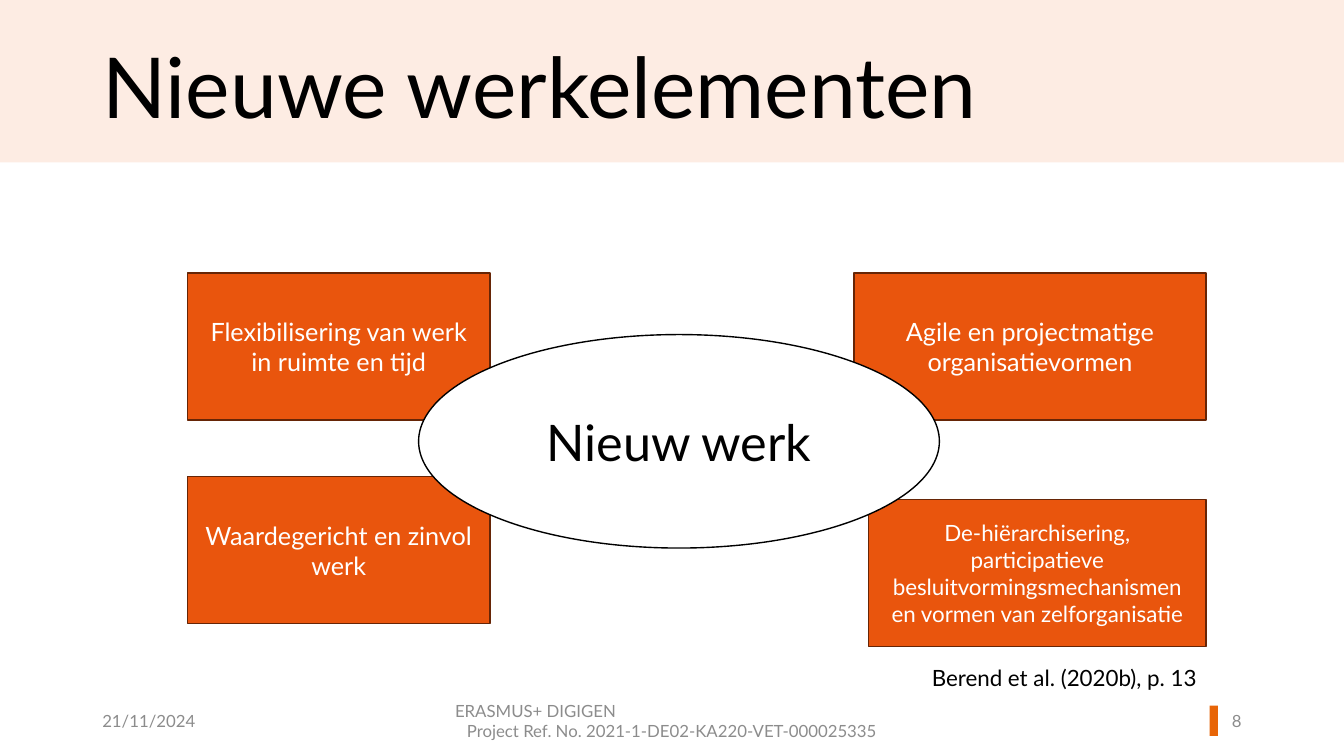
from dataclasses import dataclass

from pptx import Presentation
from pptx.dml.color import RGBColor
from pptx.enum import shapes, text
from pptx.util import Pt


@dataclass(frozen=True)
class Theme:
    font: str = "Lato"
    band: str = "FDECE3"
    accent: str = "E86507"
    box: str = "E9550D"
    box_line: str = "662506"
    dark: str = "000000"
    light: str = "FFFFFF"
    muted: str = "8C8C8C"
    title_size: int = 60
    core_size: int = 36
    box_size: int = 18
    small_size: int = 16
    footer_size: int = 12


THEME = Theme()
SHAPE = shapes.MSO_SHAPE
ANCHOR = text.MSO_ANCHOR
LEFT, CENTER, RIGHT = text.PP_ALIGN.LEFT, text.PP_ALIGN.CENTER, text.PP_ALIGN.RIGHT


def write(frame, lines, size, color, anchor=ANCHOR.MIDDLE, spacing=None):
    """Fill a text frame with (wording, alignment) lines in one style."""
    frame.word_wrap = True
    frame.vertical_anchor = anchor
    for index, (wording, alignment) in enumerate(lines):
        paragraph = frame.paragraphs[0] if index == 0 else frame.add_paragraph()
        paragraph.text = wording
        paragraph.alignment = alignment
        if spacing:
            paragraph.line_spacing = spacing
        paragraph.font.name = THEME.font
        paragraph.font.size = Pt(size)
        paragraph.font.color.rgb = RGBColor.from_string(color)


def add_label(slide, bounds, lines, size, color, **style):
    label = slide.shapes.add_textbox(*map(Pt, bounds))
    write(label.text_frame, lines, size, color, **style)


def add_figure(slide, kind, bounds, fill, line=None):
    figure = slide.shapes.add_shape(kind, *map(Pt, bounds))
    figure.shadow.inherit = False
    figure.fill.solid()
    figure.fill.fore_color.rgb = RGBColor.from_string(fill)
    if line:
        figure.line.color.rgb = RGBColor.from_string(line)
        figure.line.width = Pt(1)
    else:
        figure.line.fill.background()
    return figure


def add_element(slide, bounds, wording, size):
    element = add_figure(slide, SHAPE.RECTANGLE, bounds, THEME.box, THEME.box_line)
    write(element.text_frame, [(wording, CENTER)], size, THEME.light)


def add_header(slide):
    add_figure(slide, SHAPE.RECTANGLE, (0, 0, 960, 116), THEME.band)
    add_label(slide, (66, 29.5, 715, 61), [("Nieuwe werkelementen", LEFT)],
              THEME.title_size, THEME.dark, anchor=ANCHOR.TOP, spacing=0.9)


def add_footer(slide):
    add_figure(slide, SHAPE.RECTANGLE, (864, 504, 6, 21.6), THEME.accent)
    project = [("ERASMUS+ DIGIGEN", LEFT),
               ("Project Ref. No. 2021-1-DE02-KA220-VET-000025335", CENTER)]
    for left, width, lines in (
        (66, 216, [("21/11/2024", LEFT)]),
        (318, 324, project),
        (847, 47, [("8", RIGHT)]),
    ):
        add_label(slide, (left, 500.5, width, 29), lines,
                  THEME.footer_size, THEME.muted)


def add_diagram(slide):
    height = 105
    for left, top, width, size, wording in (
        (134, 195, 216, THEME.box_size,
         "Flexibilisering van werk in ruimte en tijd"),
        (610, 195, 251.5, THEME.box_size,
         "Agile en projectmatige organisatievormen"),
        (134, 340.5, 216, THEME.box_size,
         "Waardegericht en zinvol werk"),
        (620.5, 357, 241, THEME.small_size,
         "De-hiërarchisering, participatieve besluitvormingsmechanismen "
         "en vormen van zelforganisatie"),
    ):
        add_element(slide, (left, top, width, height), wording, size)
    core = add_figure(slide, SHAPE.OVAL, (299, 239, 372, 152.5),
                      THEME.light, THEME.dark)
    write(core.text_frame, [("Nieuw werk", CENTER)], THEME.core_size, THEME.dark)


def main():
    deck = Presentation()
    deck.slide_width, deck.slide_height = Pt(960), Pt(540)
    slide = deck.slides.add_slide(deck.slide_layouts[6])
    add_header(slide)
    add_footer(slide)
    add_label(slide, (586, 471, 348.5, 26.5), [("Berend et al. (2020b), p. 13", CENTER)],
              THEME.small_size, THEME.dark, anchor=ANCHOR.TOP)
    add_diagram(slide)
    deck.save("out.pptx")


if __name__ == "__main__":
    main()
